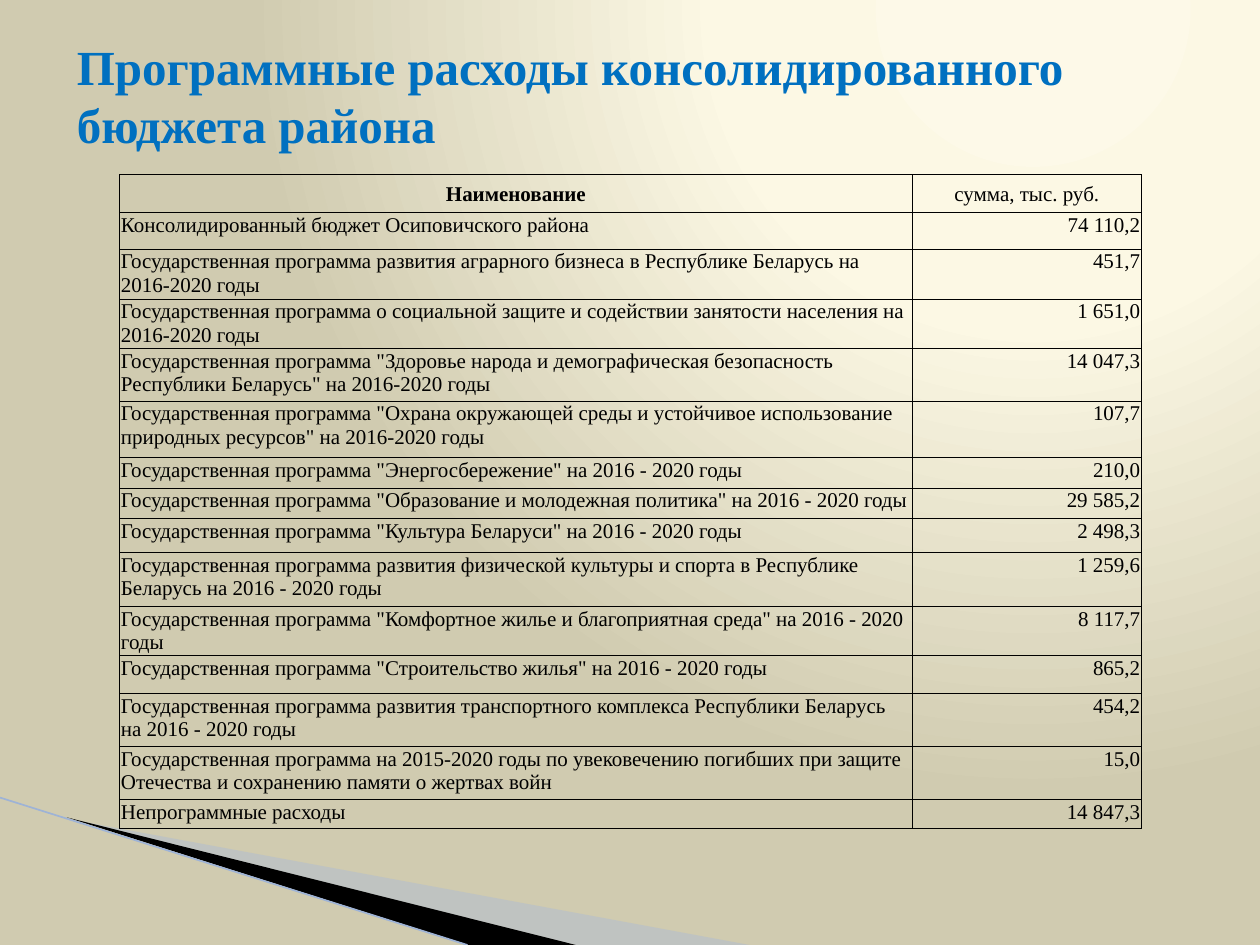
import pptx
import pptx.util
import pptx.oxml
import pptx.oxml.ns
import pptx.dml.color
import pptx.enum.text
import pptx.enum.shapes

ALIGN = pptx.enum.text.PP_ALIGN
MID = pptx.enum.text.MSO_ANCHOR.MIDDLE
TOP = pptx.enum.text.MSO_ANCHOR.TOP
SPACE = pptx.oxml.ns.nsdecls("a")


def tint(code):
    return pptx.dml.color.RGBColor.from_string(code)


def node(text):
    return pptx.oxml.parse_xml(text)


class Deck:
    face = "Times New Roman"
    ink = "000000"
    blue = "0070C0"

    def __init__(self):
        self.show = pptx.Presentation()
        self.show.slide_width = pptx.util.Inches(10)
        self.show.slide_height = pptx.util.Inches(7.5)
        self.slide = self.show.slides.add_slide(self.show.slide_layouts[5])

    def wide(self, share):
        return round(self.show.slide_width * share / 100)

    def high(self, share):
        return round(self.show.slide_height * share / 100)

    def box(self, left, top, width, height):
        return self.wide(left), self.high(top), self.wide(width), self.high(height)

    def label(self, par, text, size, color, bold, align):
        par.text = text
        par.alignment = align
        font = par.font
        font.name, font.size, font.bold = self.face, pptx.util.Pt(size), bold
        font.color.rgb = tint(color)

    def glow(self, stops):
        self.slide.background.fill.solid()
        back = self.slide.element.find(".//" + pptx.oxml.ns.qn("p:bgPr"))
        marks = "".join(
            f'<a:gs pos="{pos * 1000}"><a:srgbClr val="{code}"/></a:gs>'
            for pos, code in stops)
        back.replace(back[0], node(
            f'<a:gradFill {SPACE} rotWithShape="1"><a:gsLst>{marks}</a:gsLst>'
            '<a:path path="circle"><a:fillToRect l="65000" b="98000"/></a:path>'
            '</a:gradFill>'))

    def wedge(self, points, color, alpha=100):
        spots = [(self.wide(x), self.high(y)) for x, y in points]
        form = self.slide.shapes.build_freeform(*spots[0])
        form.add_line_segments(spots[1:], close=True)
        shape = form.convert_to_shape()
        shape.shadow.inherit = False
        shape.fill.solid()
        shape.fill.fore_color.rgb = tint(color)
        shape.line.fill.background()
        if alpha < 100:
            code = shape.element.spPr.find(".//" + pptx.oxml.ns.qn("a:srgbClr"))
            code.append(node(f'<a:alpha {SPACE} val="{alpha * 1000}"/>'))

    def line(self, start, end, color, width):
        rule = self.slide.shapes.add_connector(
            pptx.enum.shapes.MSO_CONNECTOR.STRAIGHT,
            self.wide(start[0]), self.high(start[1]),
            self.wide(end[0]), self.high(end[1]))
        rule.line.color.rgb = tint(color)
        rule.line.width = pptx.util.Pt(width)
        rule.element.spPr.append(node(f"<a:effectLst {SPACE}/>"))

    def title(self, text, area):
        shape = self.slide.shapes.title
        shape.left, shape.top, shape.width, shape.height = self.box(*area)
        frame = shape.text_frame
        frame.word_wrap = True
        frame.vertical_anchor = MID
        self.label(frame.paragraphs[0], text, 28, self.blue, True, ALIGN.LEFT)

    def cell(self, cell, text, align, bold, anchor):
        cell.margin_left = cell.margin_right = pptx.util.Inches(0.01)
        cell.margin_top = pptx.util.Inches(0.01)
        cell.margin_bottom = 0
        cell.vertical_anchor = anchor
        self.label(cell.text_frame.paragraphs[0], text, 12, self.ink, bold, align)
        cell.fill.background()
        props = cell._tc.get_or_add_tcPr()
        for spot, side in enumerate("LRTB"):
            props.insert(spot, node(
                f'<a:ln{side} {SPACE} w="6350"><a:solidFill>'
                f'<a:srgbClr val="{self.ink}"/></a:solidFill></a:ln{side}>'))

    def table(self, left, top, cols, head, rows):
        tall = [4] + [row[2] for row in rows]
        area = self.box(left, top, sum(cols), sum(tall))
        grid = self.slide.shapes.add_table(len(tall), len(cols), *area).table
        grid.first_row = grid.horz_banding = False
        for col, width in zip(grid.columns, cols):
            col.width = self.wide(width)
        for row, height in zip(grid.rows, tall):
            row.height = self.high(height)
        for col, text in enumerate(head):
            self.cell(grid.cell(0, col), text, ALIGN.CENTER, col == 0, MID)
        for row, (name, cost, _) in enumerate(rows, 1):
            self.cell(grid.cell(row, 0), name, ALIGN.LEFT, False, TOP)
            self.cell(grid.cell(row, 1), cost, ALIGN.RIGHT, False, TOP)


ROWS = [
    ("Консолидированный бюджет Осиповичского района", "74 110,2", 3.85),
    ("Государственная программа развития аграрного бизнеса в Республике Беларусь на 2016-2020 годы", "451,7", 5.3),
    ("Государственная программа о социальной защите и содействии занятости населения на 2016-2020 годы", "1 651,0", 5.2),
    ('Государственная программа "Здоровье народа и демографическая безопасность Республики Беларусь" на 2016-2020 годы', "14 047,3", 5.6),
    ('Государственная программа "Охрана окружающей среды и устойчивое использование природных ресурсов" на 2016-2020 годы', "107,7", 6),
    ('Государственная программа "Энергосбережение" на 2016 - 2020 годы', "210,0", 3.2),
    ('Государственная программа "Образование и молодежная политика" на 2016 - 2020 годы', "29 585,2", 3.2),
    ('Государственная программа "Культура Беларуси" на 2016 - 2020 годы', "2 498,3", 3.6),
    ("Государственная программа развития физической культуры и спорта в Республике Беларусь на 2016 - 2020 годы", "1 259,6", 5.75),
    ('Государственная программа "Комфортное жилье и благоприятная среда" на 2016 - 2020 годы', "8 117,7", 5.2),
    ('Государственная программа "Строительство жилья" на 2016 - 2020 годы', "865,2", 4),
    ("Государственная программа развития транспортного комплекса Республики Беларусь на 2016 - 2020 годы", "454,2", 5.6),
    ("Государственная программа на 2015-2020 годы по увековечению погибших при защите Отечества и сохранению памяти о жертвах войн", "15,0", 5.6),
    ("Непрограммные расходы", "14 847,3", 3.1),
]


def main():
    deck = Deck()
    deck.glow([(0, "FDF9E8"), (40, "FCF8E4"), (100, "D0CBB0")])
    deck.wedge([(5.5, 86.7), (59.5, 100), (45.6, 100)], "A7B9DB", 40)
    deck.wedge([(5.3, 86.5), (45.7, 100), (37.2, 100)], deck.ink)
    deck.line((0, 84.4), (37.1, 100), "9EB3D6", 0.95)
    deck.table(9.5, 18.5, [62.9, 18.2], ["Наименование", "сумма, тыс. руб."], ROWS)
    deck.title("Программные расходы консолидированного бюджета района",
               (5.1, 1.7, 90, 16.7))
    deck.show.save("out.pptx")


if __name__ == "__main__":
    main()
